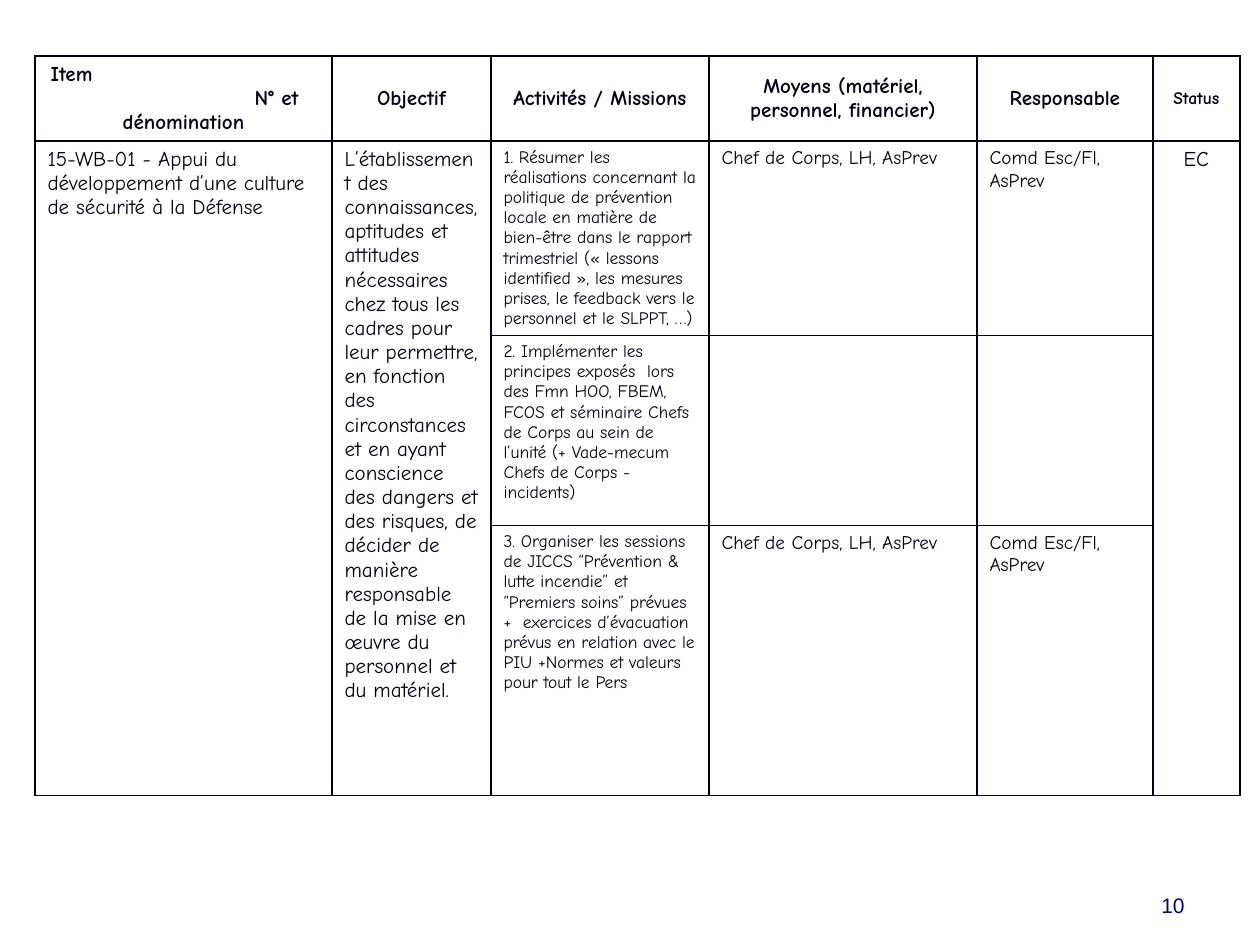
import pptx
import pptx.dml.color
import pptx.enum.text
import pptx.oxml
import pptx.oxml.ns
import pptx.util
from lxml import etree

RGB = pptx.dml.color.RGBColor
ALIGN = pptx.enum.text.PP_ALIGN
ANCHOR = pptx.enum.text.MSO_ANCHOR
qn = pptx.oxml.ns.qn

INK = RGB(0x00, 0x00, 0x18)
NAVY = RGB(0x00, 0x00, 0x80)
TABLE_FONT = "Comic Neue"

TEAM = "Chef de Corps, LH, AsPrev"
LEADERS = "Comd Esc/Fl, AsPrev"

HEADERS = [
    "Item\nN° et\ndénomination",
    "Objectif",
    "Activités / Missions",
    "Moyens (matériel, personnel, financier)",
    "Responsable",
    "Status",
]
ITEM = "15-WB-01 - Appui du développement d’une culture de sécurité à la Défense"
GOAL = (
    "L’établissement des connaissances, aptitudes et attitudes nécessaires chez "
    "tous les cadres pour leur permettre, en fonction des circonstances et en "
    "ayant conscience des dangers et des risques, de décider de manière "
    "responsable de la mise en œuvre du personnel et du matériel."
)
STATUS = "EC"
MISSIONS = [
    ("1. Résumer les réalisations concernant la politique de prévention locale "
     "en matière de bien-être dans le rapport trimestriel (« lessons identified », "
     "les mesures prises, le feedback vers le personnel et le SLPPT, …)",
     TEAM, LEADERS),
    ("2. Implémenter les principes exposés  lors des Fmn HOO, FBEM, FCOS et "
     "séminaire Chefs de Corps au sein de l’unité (+ Vade-mecum Chefs de Corps - "
     "incidents)", "", ""),
    ("3. Organiser les sessions de JICCS “Prévention & lutte incendie” et "
     "“Premiers soins” prévues  +  exercices d’évacuation prévus en relation avec "
     "le PIU +Normes et valeurs pour tout le Pers", TEAM, LEADERS),
]

COL_WIDTHS = [297, 159, 218, 268, 176, 87]
ROW_HEIGHTS = [85, 194, 190, 270]
HEADER_SIZES = [12, 12, 12, 12, 12, 10]
BODY_SIZES = [12, 12, 10, 11, 11, 12]
SPANNING_COLS = (0, 1, 5)


def px(n):
    return pptx.util.Emu(n * 914400 // 126)


def write(tf, text, size, color, font, align, bold=False):
    tf.text = text
    for p in tf.paragraphs:
        p.alignment = align
        for r in p.runs:
            r.font.name = font
            r.font.size = pptx.util.Pt(size)
            r.font.bold = bold
            r.font.color.rgb = color


def outline(cell):
    """Put a 1 pt line on all four sides of the cell."""
    tcPr = cell._tc.get_or_add_tcPr()
    for side in ("a:lnL", "a:lnR", "a:lnT", "a:lnB"):
        ln = etree.SubElement(tcPr, qn(side), w=str(pptx.util.Pt(1)))
        fill = etree.SubElement(ln, qn("a:solidFill"))
        etree.SubElement(fill, qn("a:srgbClr"), val=str(INK))


def add_plan_table(s):
    shape = s.shapes.add_table(len(ROW_HEIGHTS), len(COL_WIDTHS), px(35), px(56),
                               px(sum(COL_WIDTHS)), px(sum(ROW_HEIGHTS)))
    table = shape.table
    table.first_row = table.horz_banding = False
    for column, width in zip(table.columns, COL_WIDTHS):
        column.width = px(width)
    for row, height in zip(table.rows, ROW_HEIGHTS):
        row.height = px(height)
    for cell in table.iter_cells():
        outline(cell)
        cell.fill.background()

    for c, text in enumerate(HEADERS):
        cell = table.cell(0, c)
        cell.vertical_anchor = ANCHOR.MIDDLE
        write(cell.text_frame, text, HEADER_SIZES[c], INK, TABLE_FONT,
              ALIGN.CENTER, bold=True)
    item, number, _ = table.cell(0, 0).text_frame.paragraphs
    for p, indent in ((item, 3), (number, 207)):
        p.alignment = ALIGN.LEFT
        p._p.get_or_add_pPr().set("marL", str(px(indent)))

    for c in SPANNING_COLS:
        table.cell(1, c).merge(table.cell(len(MISSIONS), c))
    body = {(1, 0): ITEM, (1, 1): GOAL, (1, 5): STATUS}
    for r, mission in enumerate(MISSIONS, 1):
        for c, text in enumerate(mission, 2):
            body[r, c] = text
    for (r, c), text in body.items():
        align = ALIGN.CENTER if text == STATUS else ALIGN.LEFT
        write(table.cell(r, c).text_frame, text, BODY_SIZES[c], INK, TABLE_FONT, align)


def add_page_number(s):
    tf = s.shapes.add_textbox(px(903), px(861), px(294), px(63)).text_frame
    tf.word_wrap = True
    tf.vertical_anchor = ANCHOR.BOTTOM
    write(tf, "10", 12, NAVY, "Arial", ALIGN.RIGHT)


def main():
    prs = pptx.Presentation()
    prs.slide_width, prs.slide_height = px(1260), px(945)
    s = prs.slides.add_slide(prs.slide_layouts[6])
    add_plan_table(s)
    add_page_number(s)
    prs.save("out.pptx")


if __name__ == "__main__":
    main()
